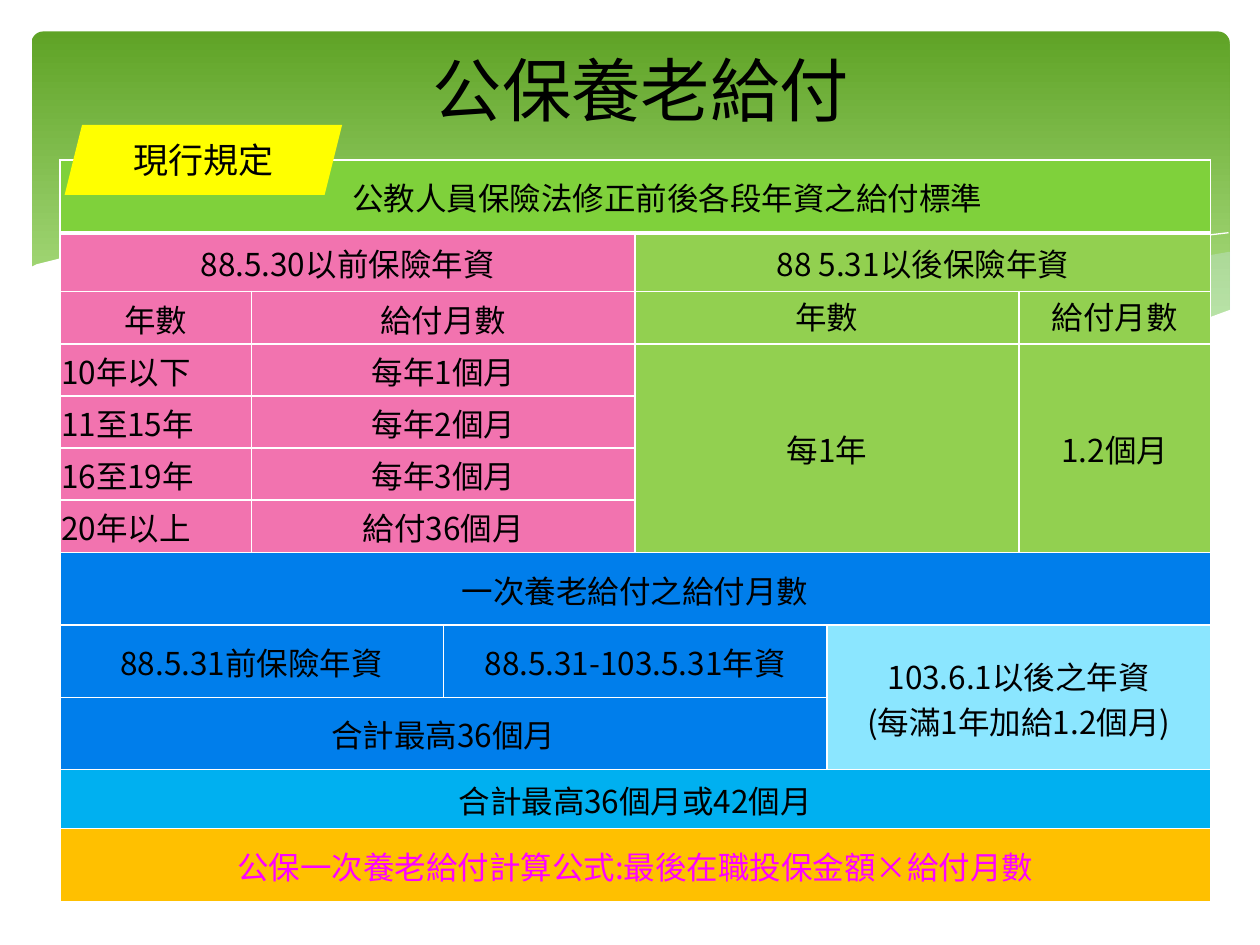
import lxml.etree
import pptx
import pptx.dml.color
import pptx.enum.dml
import pptx.enum.shapes
import pptx.enum.text
import pptx.oxml
import pptx.oxml.ns
import pptx.util

Pt = pptx.util.Pt
qn = pptx.oxml.ns.qn
ALIGN = pptx.enum.text.PP_ALIGN
ANCHOR = pptx.enum.text.MSO_ANCHOR
SHAPE = pptx.enum.shapes.MSO_SHAPE

COLORS = {
    "dark green": "5FA326", "pale green": "B2E389", "wave": "D6ECFF",
    "white": "FFFFFF", "black": "000000", "yellow": "FFFF00",
    "heading": "7FD13B", "pink": "F273AF", "green": "92D050",
    "blue": "007EEB", "light blue": "8BE6FF", "sky": "00B0F0",
    "gold": "FFC000", "magenta": "FF00FF",
}
FONT = "Noto Sans CJK SC"
FONT_JP = "Noto Sans CJK JP"

# Content
TITLE = "公保養老給付"
TAG = "現行規定"

# row, column, rows spanned, columns spanned, text, fill, text format
CELLS = [
    (0, 0, 1, 6, "公教人員保險法修正前後各段年資之給付標準", "heading", {}),
    (1, 0, 1, 3, "88.5.30以前保險年資", "pink", {}),
    (1, 3, 1, 3, "88 5.31以後保險年資", "green", {}),
    (2, 0, 1, 1, "年數", "pink", {}),
    (2, 1, 1, 2, "給付月數", "pink", {}),
    (2, 3, 1, 2, "年數", "green", {"anchor": ANCHOR.TOP}),
    (2, 5, 1, 1, "給付月數", "green", {"anchor": ANCHOR.TOP, "font": FONT_JP}),
    (3, 0, 1, 1, "10年以下", "pink", {"align": ALIGN.LEFT}),
    (3, 1, 1, 2, "每年1個月", "pink", {}),
    (3, 3, 4, 2, "每1年", "green", {}),
    (3, 5, 4, 1, "1.2個月", "green", {"font": FONT_JP}),
    (4, 0, 1, 1, "11至15年", "pink", {"align": ALIGN.JUSTIFY}),
    (4, 1, 1, 2, "每年2個月", "pink", {}),
    (5, 0, 1, 1, "16至19年", "pink", {"align": ALIGN.LEFT}),
    (5, 1, 1, 2, "每年3個月", "pink", {}),
    (6, 0, 1, 1, "20年以上", "pink", {"align": ALIGN.LEFT}),
    (6, 1, 1, 2, "給付36個月", "pink", {}),
    (7, 0, 1, 6, "一次養老給付之給付月數", "blue", {}),
    (8, 0, 1, 2, "88.5.31前保險年資", "blue", {}),
    (8, 2, 1, 2, "88.5.31-103.5.31年資", "blue", {}),
    (8, 4, 2, 2, "103.6.1以後之年資\n(每滿1年加給1.2個月)", "light blue", {}),
    (9, 0, 1, 4, "合計最高36個月", "blue", {}),
    (10, 0, 1, 6, "合計最高36個月或42個月", "sky", {}),
    (11, 0, 1, 6, "公保一次養老給付計算公式:最後在職投保金額×給付月數", "gold",
     {"color": "magenta"}),
]
ROW_HEIGHTS = [41.7, 33.5, 30, 29.7, 29.7, 29.7, 30, 41.7, 41.3, 41.3, 33.7, 41.7]
COLUMN_COUNT = 6
TABLE_BOX = (34.2, 91.4, 657.6, sum(ROW_HEIGHTS))

# Wave bands: points, fill, opacity in percent (no fill: a white hairline)
WAVES = [
    ([(702, 144), (673, 149), (642, 156), (620, 161), (580, 171), (542, 179),
      (508, 185), (476, 191), (508, 195), (536, 198), (570, 200), (601, 200),
      (634, 197), (663, 191), (683, 185), (702.7, 178), (702.7, 144)], "wave", 29),
    ([(643, 197), (603, 191), (558, 183), (508, 173), (453, 160), (420, 152),
      (390, 146), (352, 140), (318, 136), (287, 134), (260, 133), (236, 134),
      (206, 138), (246, 143), (291, 152), (323, 160), (382, 173), (433, 184),
      (479, 192), (520, 197), (556, 200), (589, 200), (617, 199)], "wave", 40),
    ([(222, 140), (241, 138), (261, 136), (289, 135), (324, 135), (367, 138),
      (419, 144), (479, 153), (547, 168), (598, 181), (653, 196)], None, None),
    ([(441, 185), (470, 177), (518, 165), (580, 151), (624, 143), (655, 138),
      (685, 135), (702, 133)], None, None),
    ([(703.4, 177), (684, 184), (655, 191), (630, 195), (602, 198), (571, 199),
      (536, 198), (496, 194), (451, 186), (400, 176), (342, 163), (322, 158),
      (282, 149), (245, 142), (210, 137), (180, 134), (152, 132), (127, 132),
      (105, 133), (86, 135), (68, 139), (48, 143), (33, 148), (21, 151),
      (16.6, 153), (16.6, 237), (703.4, 237)], "white", 100),
]


def rgb(name):
    return pptx.dml.color.RGBColor.from_string(COLORS[name])


def write_text(text_frame, text, size=18, color="black", font=FONT, align=ALIGN.CENTER):
    text_frame.word_wrap = True
    for index, line in enumerate(text.split("\n")):
        paragraph = text_frame.paragraphs[0] if index == 0 else text_frame.add_paragraph()
        paragraph.alignment = align
        run = paragraph.add_run()
        run.text = line
        run.font.size = Pt(size)
        run.font.bold = False
        run.font.color.rgb = rgb(color)
        run.font.name = font
        east_asian = lxml.etree.Element(qn("a:ea"), typeface=font)
        run.font._element.find(qn("a:latin")).addnext(east_asian)


def add_wave(slide, points, fill, opacity):
    builder = slide.shapes.build_freeform(*points[0], scale=Pt(1))
    builder.add_line_segments(points[1:], close=fill is not None)
    shape = builder.convert_to_shape()
    shape.shadow.inherit = False
    if fill is None:
        shape.fill.background()
        shape.line.color.rgb = rgb("white")
        shape.line.width = Pt(0)
        return
    shape.line.fill.background()
    shape.fill.solid()
    shape.fill.fore_color.rgb = rgb(fill)
    if opacity < 100:
        color = shape.element.spPr.find(".//" + qn("a:srgbClr"))
        lxml.etree.SubElement(color, qn("a:alpha"), val=str(opacity * 1000))


def add_borders(cell, row):
    widths = {"lnL": 1, "lnR": 1, "lnT": 3 if row == 1 else 1, "lnB": 3 if row == 0 else 1}
    properties = cell._tc.get_or_add_tcPr()
    for index, (side, width) in enumerate(widths.items()):
        line = lxml.etree.Element(qn("a:" + side), w=str(Pt(width)))
        fill = lxml.etree.SubElement(line, qn("a:solidFill"))
        lxml.etree.SubElement(fill, qn("a:srgbClr"), val=COLORS["white"])
        properties.insert(index, line)


def add_benefit_table(slide):
    frame = slide.shapes.add_table(len(ROW_HEIGHTS), COLUMN_COUNT, *map(Pt, TABLE_BOX))
    table = frame.table
    table.first_row = table.horz_banding = False
    for column in table.columns:
        column.width = Pt(TABLE_BOX[2] / COLUMN_COUNT)
    for row, height in zip(table.rows, ROW_HEIGHTS):
        row.height = Pt(height)
    for row, column, row_span, column_span, text, fill, options in CELLS:
        cell = table.cell(row, column)
        if row_span * column_span > 1:
            cell.merge(table.cell(row + row_span - 1, column + column_span - 1))
        text_format = dict(options)
        cell.vertical_anchor = text_format.pop("anchor", ANCHOR.MIDDLE)
        # The heading is shifted right, clear of the tag
        cell.margin_left = Pt(37 if row == 0 else 0.7)
        cell.margin_right = cell.margin_top = Pt(0.7)
        cell.margin_bottom = Pt(0)
        write_text(cell.text_frame, text, **text_format)
        for r in range(row, row + row_span):
            for c in range(column, column + column_span):
                part = table.cell(r, c)
                part.fill.solid()
                part.fill.fore_color.rgb = rgb(fill)
                add_borders(part, r)


def add_title(slide):
    title = slide.shapes.title
    title.left, title.top, title.width, title.height = map(Pt, (45.4, 25.2, 641.5, 51.1))
    title.text_frame.vertical_anchor = ANCHOR.MIDDLE
    write_text(title.text_frame, TITLE, size=39.6)
    effects = pptx.oxml.parse_xml(
        '<a:effectLst xmlns:a="http://schemas.openxmlformats.org/drawingml/2006/main">'
        '<a:outerShdw blurRad="38100" dist="38100" dir="2700000"><a:srgbClr val="000000">'
        '<a:alpha val="43000"/></a:srgbClr></a:outerShdw></a:effectLst>')
    run = title.text_frame.paragraphs[0].runs[0]
    run.font._element.find(qn("a:solidFill")).addnext(effects)
    slide.shapes.element.append(title.element)  # in front of the background


def main():
    presentation = pptx.Presentation()
    presentation.slide_width, presentation.slide_height = Pt(720), Pt(540)
    slide = presentation.slides.add_slide(presentation.slide_layouts[5])

    # Green background with waves
    panel = slide.shapes.add_shape(SHAPE.ROUNDED_RECTANGLE, *map(Pt, (18, 18, 684.7, 194.4)))
    panel.adjustments[0] = 0.034
    panel.shadow.inherit = False
    panel.line.fill.background()
    panel.fill.gradient()
    panel.fill.gradient_angle = 270
    stops = zip(panel.fill.gradient_stops, (("dark green", 0), ("pale green", 0.9)))
    for stop, (color, position) in stops:
        stop.color.rgb = rgb(color)
        stop.position = position
    for wave in WAVES:
        add_wave(slide, *wave)

    add_title(slide)
    add_benefit_table(slide)

    # Tag over the table corner
    tag = slide.shapes.add_shape(SHAPE.PARALLELOGRAM, *map(Pt, (36.9, 71.4, 158.6, 40)))
    tag.shadow.inherit = False
    tag.line.fill.background()
    tag.fill.solid()
    tag.fill.fore_color.rgb = rgb("yellow")
    tag.text_frame.vertical_anchor = ANCHOR.MIDDLE
    write_text(tag.text_frame, TAG, size=20)

    presentation.save("out.pptx")


if __name__ == "__main__":
    main()
